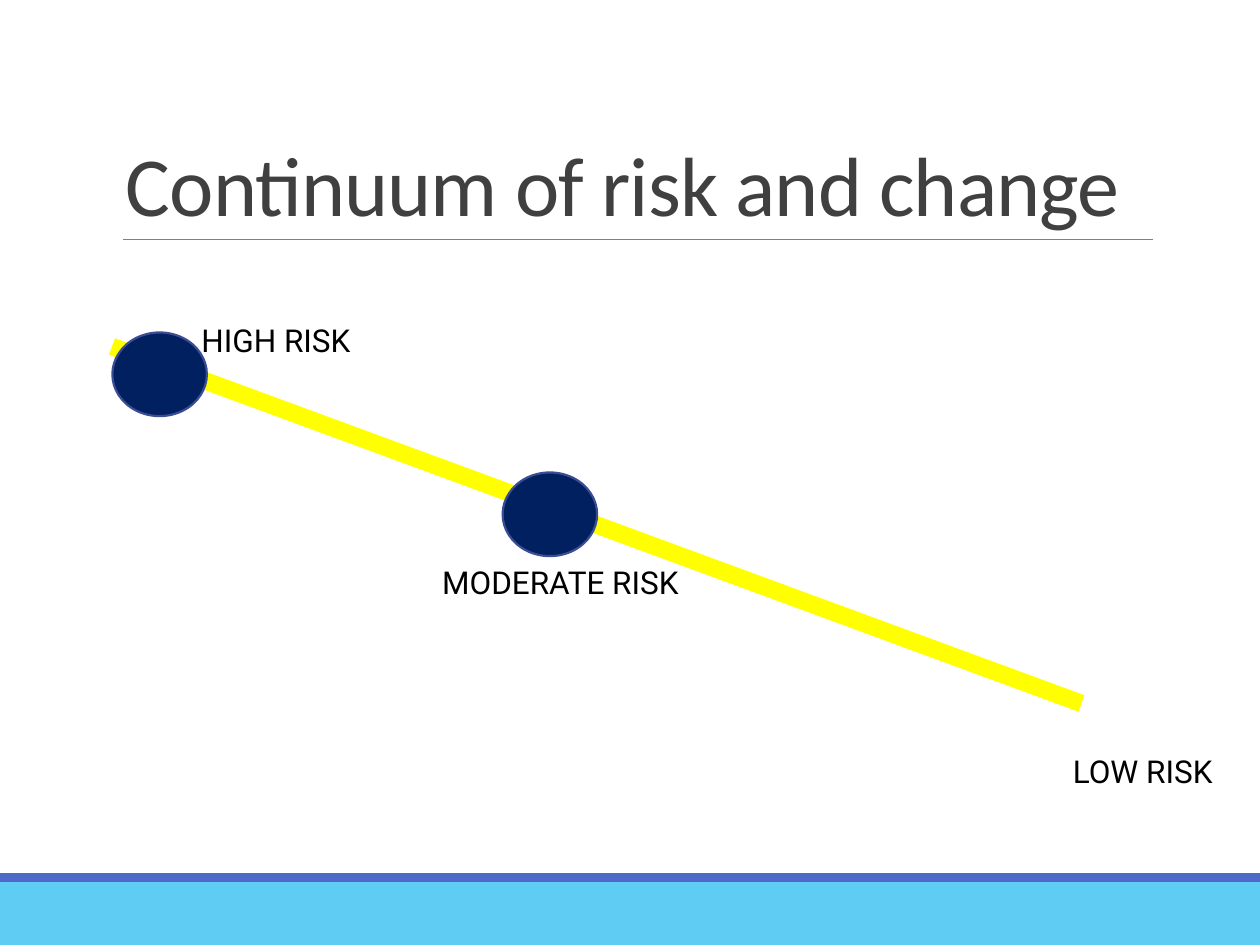
from pptx import Presentation
from pptx.dml.color import RGBColor as RGB
from pptx.enum.shapes import MSO_CONNECTOR as Link, MSO_SHAPE as Form
from pptx.enum.text import MSO_ANCHOR as Anchor, MSO_AUTO_SIZE as Fit
from pptx.oxml.ns import qn
from pptx.util import Pt
from lxml import etree

HUES = {
    "sky": "5ECCF3", "blue": "4E67C8", "navy": "002060", "edge": "3A4C94",
    "gray": "808080", "dark": "404040", "black": "000000", "gold": "FFFF00",
}


class Deck:
    """Draw styled elements on the current slide."""

    def __init__(self, wide, high):
        self.prs = Presentation()
        self.prs.slide_width, self.prs.slide_height = Pt(wide), Pt(high)
        self.slide = self.prs.slides.add_slide(self.prs.slide_layouts[6])
        self.shapes = self.slide.shapes

    def hue(self, name):
        return RGB.from_string(HUES[name])

    def shape(self, form, box, fill, edge=None):
        item = self.shapes.add_shape(form, *map(Pt, box))
        item.shadow.inherit = False
        item.fill.solid()
        item.fill.fore_color.rgb = self.hue(fill)
        if edge:
            item.line.color.rgb = self.hue(edge)
            item.line.width = Pt(1.25)
        else:
            item.line.fill.background()

    def line(self, ends, color, width):
        item = self.shapes.add_connector(Link.STRAIGHT, *map(Pt, ends))
        item.line.color.rgb = self.hue(color)
        item.line.width = Pt(width)
        etree.SubElement(item._element.spPr, qn("a:effectLst"))

    def text(self, words, box, font, size, color):
        item = self.shapes.add_textbox(*map(Pt, box))
        frame = item.text_frame
        frame.word_wrap = False
        para = frame.paragraphs[0]
        para.text = words
        para.font.name, para.font.size = font, Pt(size)
        para.font.color.rgb = self.hue(color)
        return frame

    def title(self, words, box):
        frame = self.text(words, box, "Calibri", 48, "dark")
        frame.word_wrap = True
        frame.vertical_anchor = Anchor.BOTTOM
        para = frame.paragraphs[0]
        para.line_spacing = 0.85
        para.runs[0]._r.get_or_add_rPr().set("spc", "-50")

    def label(self, words, left, top, width):
        box = left, top, width, 29
        frame = self.text(words, box, "Roboto", 18, "black")
        frame.auto_size = Fit.SHAPE_TO_FIT_TEXT


def main():
    deck = Deck(720, 540)
    deck.shape(Form.RECTANGLE, (0, 504, 720, 36), "sky")
    deck.shape(Form.RECTANGLE, (0, 499, 720, 5), "blue")
    deck.line((70.5, 136.8, 658.8, 136.8), "gray", 0.5)
    deck.title("Continuum of risk and change", (64.8, 22.5, 594, 114.3))
    deck.line((64, 198, 618, 402), "gold", 10)
    for words, left, top, width in (
        ("HIGH RISK", 108, 180, 102.4),
        ("MODERATE RISK", 245.6, 318.4, 150.6),
        ("LOW RISK", 606, 426, 97.5),
    ):
        deck.label(words, left, top, width)
    for left, top in ((64.2, 190), (287.2, 270)):
        deck.shape(Form.OVAL, (left, top, 54, 47.8), "navy", "edge")
    deck.prs.save("out.pptx")


if __name__ == "__main__":
    main()
